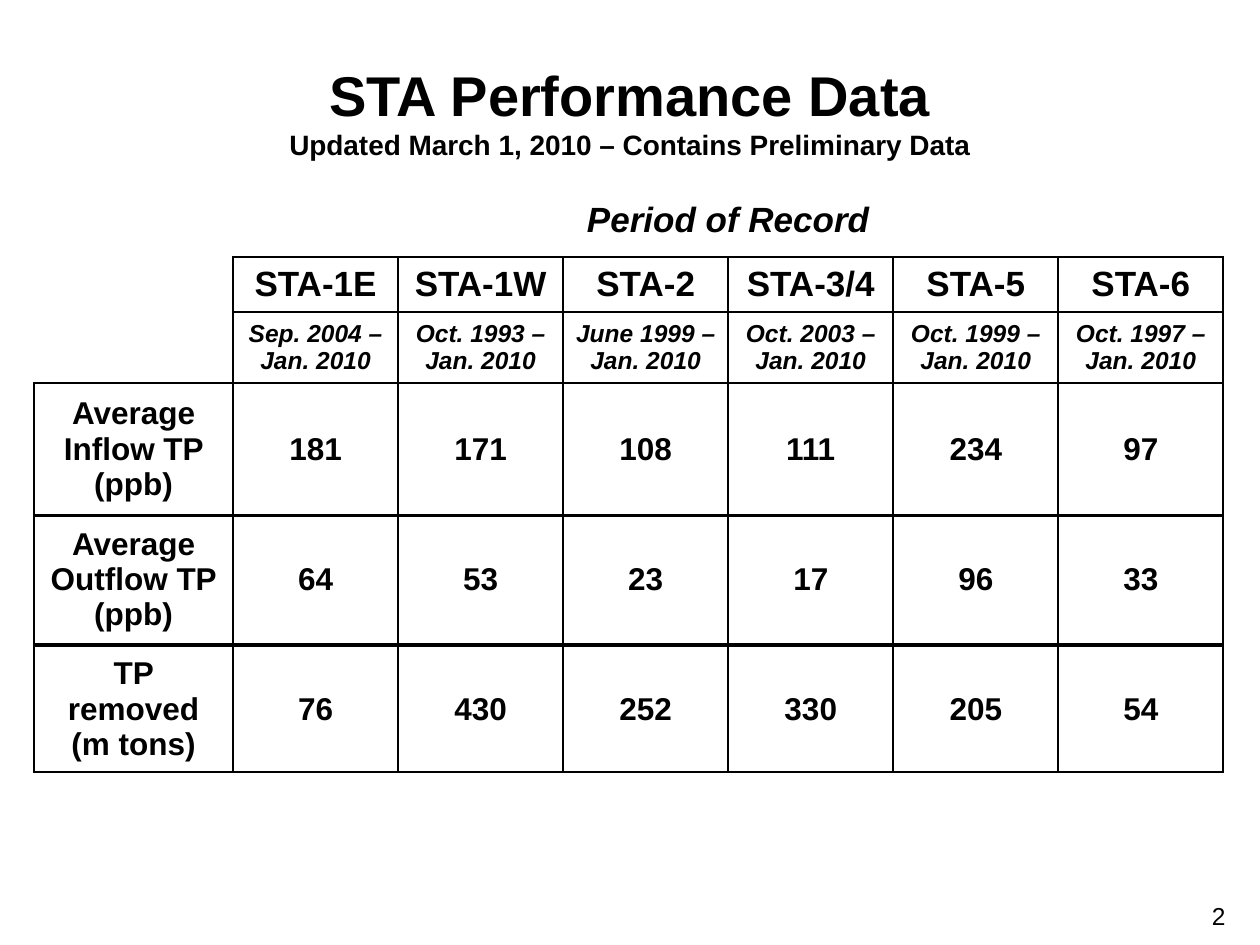
from lxml import etree
from pptx import Presentation
from pptx.dml.color import RGBColor
from pptx.enum.text import MSO_ANCHOR as Anchor, PP_ALIGN as Align
from pptx.oxml.ns import qn
from pptx.util import Inches, Pt


def style(paragraph, size, bold=True, italic=False, color="000000"):
    font = paragraph.font
    font.name, font.size, font.bold, font.italic = "Arial", Pt(size), bold, italic
    font.color.rgb = RGBColor.from_string(color)


def add_borders(cell, sides, color="000000"):
    properties = cell._tc.get_or_add_tcPr()
    for side in "LRTB":
        if side in sides:
            line = etree.SubElement(properties, qn(f"a:ln{side}"), w=str(Pt(1.5)))
            fill = etree.SubElement(line, qn("a:solidFill"))
            etree.SubElement(fill, qn("a:srgbClr"), val=color)


prs = Presentation()
prs.slide_width, prs.slide_height = Inches(10), Inches(7.5)
slide = prs.slides.add_slide(prs.slide_layouts[6])

page_number = slide.shapes.add_textbox(Inches(9.52), Inches(7.1), Inches(0.44), Inches(0.34))
page_number.text_frame.word_wrap = True
page_number.text_frame.text = "2"
style(page_number.text_frame.paragraphs[0], 14, bold=False)

heading = slide.shapes.add_textbox(Inches(0.5), Inches(0.42), Inches(9), Inches(0.92))
heading.text_frame.word_wrap = True
heading.text_frame.vertical_anchor = Anchor.MIDDLE
title = heading.text_frame.paragraphs[0]
title.alignment = Align.CENTER
style(title, 32)
title.add_run().text = "STA Performance Data"
title.add_line_break()
subtitle = title.add_run()
subtitle.text = "Updated March 1, 2010 – Contains Preliminary Data"
subtitle.font.size = Pt(16)

starts = ["Sep. 2004", "Oct. 1993", "June 1999", "Oct. 2003", "Oct. 1999", "Oct. 1997"]
records = [
    ["", "Period of Record", "", "", "", "", ""],
    ["", "STA-1E", "STA-1W", "STA-2", "STA-3/4", "STA-5", "STA-6"],
    [""] + [f"{start} – Jan. 2010" for start in starts],
    ["Average Inflow TP (ppb)", "181", "171", "108", "111", "234", "97"],
    ["Average Outflow TP (ppb)", "64", "53", "23", "17", "96", "33"],
    [""] * 7,
    ["TP removed (m tons)", "76", "430", "252", "330", "205", "54"],
]
heights = [0.59, 0.4, 0.55, 1.05, 1.02, 0.01, 1]
sizes = [20, 20, 14, 18, 18, 1, 18]
label_borders = ["", "R", "RB"] + ["LRTB"] * 4
value_borders = ["B", "LTR", "LRB"] + ["LRTB"] * 4
divider_row = 5

table = slide.shapes.add_table(
    7, 7, Inches(0.27), Inches(1.45), Inches(9.44), Inches(sum(heights))
).table
table.first_row = table.horz_banding = False
table._tbl.tblPr.find(qn("a:tableStyleId")).text = "{2D5ABB26-0587-4C30-8999-92F81FD0307C}"
for column, width in zip(table.columns, [1.58] + [1.31] * 6):
    column.width = Inches(width)

for r, record in enumerate(records):
    table.rows[r].height = Inches(heights[r])
    for c, text in enumerate(record):
        cell = table.cell(r, c)
        cell.vertical_anchor = Anchor.MIDDLE
        add_borders(cell, value_borders[r] if c else label_borders[r])
        if r == divider_row:
            cell.margin_top = cell.margin_bottom = 0
            cell.fill.solid()
            cell.fill.fore_color.rgb = RGBColor.from_string("000000")
        else:
            cell.fill.background()
        cell.text = text
        paragraph = cell.text_frame.paragraphs[0]
        paragraph.alignment = Align.CENTER
        style(paragraph, sizes[r], italic=r in (0, 2))
        if not text:
            etree.SubElement(paragraph._p, qn("a:endParaRPr"), sz=str(sizes[r] * 100))

table.cell(0, 1).merge(table.cell(0, 6))

prs.save("out.pptx")
